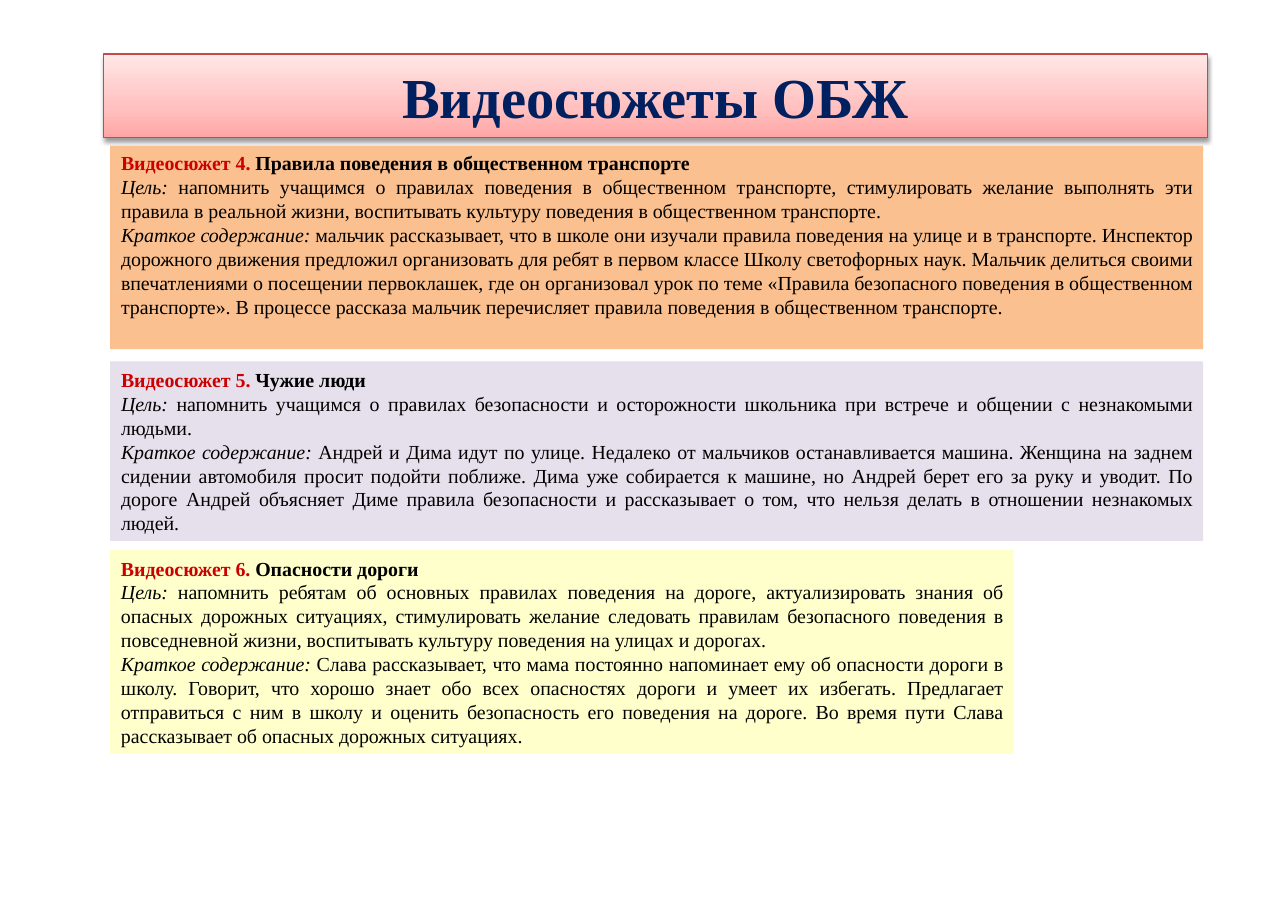
from dataclasses import dataclass

from lxml.etree import SubElement
from pptx import Presentation
from pptx.dml.color import RGBColor
from pptx.enum.shapes import MSO_SHAPE
from pptx.enum.text import MSO_ANCHOR, PP_ALIGN
from pptx.oxml import parse_xml
from pptx.oxml.ns import nsdecls, qn
from pptx.shapes.autoshape import Shape
from pptx.slide import Slide
from pptx.util import Pt


@dataclass(frozen=True)
class Theme:
    font: str = "Times New Roman"
    title_size: float = 36.9
    body_size: float = 13
    title: str = "002060"
    title_line: str = "BF4C48"
    title_stops: tuple = ((0, "FFA6A5"), (35, "FFC0BF"), (100, "FFE7E7"))
    heading: str = "CC0000"
    text: str = "000000"
    orange: str = "FAC090"
    lilac: str = "E6E0EC"
    yellow: str = "FFFFCC"


@dataclass(frozen=True)
class Story:
    number: int
    name: str
    goal: str
    summary: str
    fill: str
    top: float
    width: float
    height: float
    anchor: MSO_ANCHOR = MSO_ANCHOR.MIDDLE


THEME = Theme()
STORY_LEFT = 72
STORIES = (
    Story(
        4,
        "Правила поведения в общественном транспорте",
        "напомнить учащимся о правилах поведения в общественном транспорте, "
        "стимулировать желание выполнять эти правила в реальной жизни, "
        "воспитывать культуру поведения в общественном транспорте.",
        "мальчик рассказывает, что в школе они изучали правила поведения на улице "
        "и в транспорте. Инспектор дорожного движения предложил организовать для "
        "ребят в первом классе Школу светофорных наук. Мальчик делиться своими "
        "впечатлениями о посещении первоклашек, где он организовал урок по теме "
        "«Правила безопасного поведения в общественном транспорте». В процессе "
        "рассказа мальчик перечисляет правила поведения в общественном транспорте.",
        THEME.orange, 95.2, 714.2, 133, MSO_ANCHOR.TOP,
    ),
    Story(
        5,
        "Чужие люди",
        "напомнить учащимся о правилах безопасности и осторожности школьника при "
        "встрече и общении с незнакомыми людьми.",
        "Андрей и Дима идут по улице. Недалеко от мальчиков останавливается машина. "
        "Женщина на заднем сидении автомобиля просит подойти поближе. Дима уже "
        "собирается к машине, но Андрей берет его за руку и уводит. По дороге Андрей "
        "объясняет Диме правила безопасности и рассказывает о том, что нельзя делать "
        "в отношении незнакомых людей.",
        THEME.lilac, 236.2, 714.2, 117.4,
    ),
    Story(
        6,
        "Опасности дороги",
        "напомнить ребятам об основных правилах поведения на дороге, "
        "актуализировать знания об опасных дорожных ситуациях, стимулировать "
        "желание следовать правилам безопасного поведения в повседневной жизни, "
        "воспитывать культуру поведения на улицах и дорогах.",
        "Слава рассказывает, что мама постоянно напоминает ему об опасности дороги "
        "в школу. Говорит, что хорошо знает обо всех опасностях дороги и умеет их "
        "избегать. Предлагает отправиться с ним в школу и оценить безопасность его "
        "поведения на дороге. Во время пути Слава рассказывает об опасных дорожных "
        "ситуациях.",
        THEME.yellow, 359.5, 590.4, 133,
    ),
)


def rgb(color: str) -> RGBColor:
    return RGBColor.from_string(color)


def add_box(slide: Slide, left: float, top: float, width: float, height: float,
            anchor: MSO_ANCHOR) -> Shape:
    sp = slide.shapes.add_shape(MSO_SHAPE.RECTANGLE, Pt(left), Pt(top), Pt(width), Pt(height))
    sp.shadow.inherit = False
    sp.text_frame.word_wrap = True
    sp.text_frame.vertical_anchor = anchor
    return sp


def fill_gradient(sp: Shape) -> None:
    """Fill the title with its three-stop gradient, running from bottom to top."""
    sp.fill.gradient()
    sp.fill.gradient_angle = 90
    stops = sp._element.spPr.find(qn("a:gradFill")).find(qn("a:gsLst"))
    stops.clear()
    for percent, color in THEME.title_stops:
        stop = SubElement(stops, qn("a:gs"), pos=str(percent * 1000))
        SubElement(stop, qn("a:srgbClr"), val=color)


def cast_shadow(sp: Shape) -> None:
    effects = sp._element.spPr.find(qn("a:effectLst"))
    effects.append(parse_xml(
        f'<a:outerShdw {nsdecls("a")} blurRad="{Pt(3.1)}" dist="{Pt(1.6)}" '
        'dir="5400000" rotWithShape="0"><a:srgbClr val="000000">'
        '<a:alpha val="38000"/></a:srgbClr></a:outerShdw>'
    ))


def add_title(slide: Slide, text: str) -> None:
    sp = add_box(slide, 67.7, 35.3, 721.4, 54.7, MSO_ANCHOR.MIDDLE)
    fill_gradient(sp)
    cast_shadow(sp)
    sp.line.color.rgb = rgb(THEME.title_line)
    sp.line.width = Pt(0.75)
    tf = sp.text_frame
    tf.margin_left = tf.margin_right = Pt(8)
    tf.margin_top = tf.margin_bottom = Pt(4)
    p = tf.paragraphs[0]
    p.text = text
    p.alignment = PP_ALIGN.CENTER
    p.font.name = THEME.font
    p.font.size = Pt(THEME.title_size)
    p.font.bold = True
    p.font.color.rgb = rgb(THEME.title)


def add_story(slide: Slide, story: Story) -> None:
    sp = add_box(slide, STORY_LEFT, story.top, story.width, story.height, story.anchor)
    sp.fill.solid()
    sp.fill.fore_color.rgb = rgb(story.fill)
    sp.line.fill.background()
    tf = sp.text_frame
    rows = (
        (f"Видеосюжет {story.number}. ", story.name),
        ("Цель: ", story.goal),
        ("Краткое содержание: ", story.summary),
    )
    for i, (label, text) in enumerate(rows):
        p = tf.add_paragraph() if i else tf.paragraphs[0]
        is_heading = i == 0
        p.alignment = PP_ALIGN.JUSTIFY
        p.font.name = THEME.font
        p.font.size = Pt(THEME.body_size)
        p.font.bold = is_heading
        p.font.color.rgb = rgb(THEME.text)
        r = p.add_run()
        r.text = label
        if is_heading:
            r.font.color.rgb = rgb(THEME.heading)
        else:
            r.font.italic = True
        p.add_run().text = text


def main() -> None:
    prs = Presentation()
    prs.slide_width, prs.slide_height = Pt(841.68), Pt(595.44)
    slide = prs.slides.add_slide(prs.slide_layouts[6])
    add_title(slide, "Видеосюжеты ОБЖ")
    for story in STORIES:
        add_story(slide, story)
    prs.save("out.pptx")


if __name__ == "__main__":
    main()
